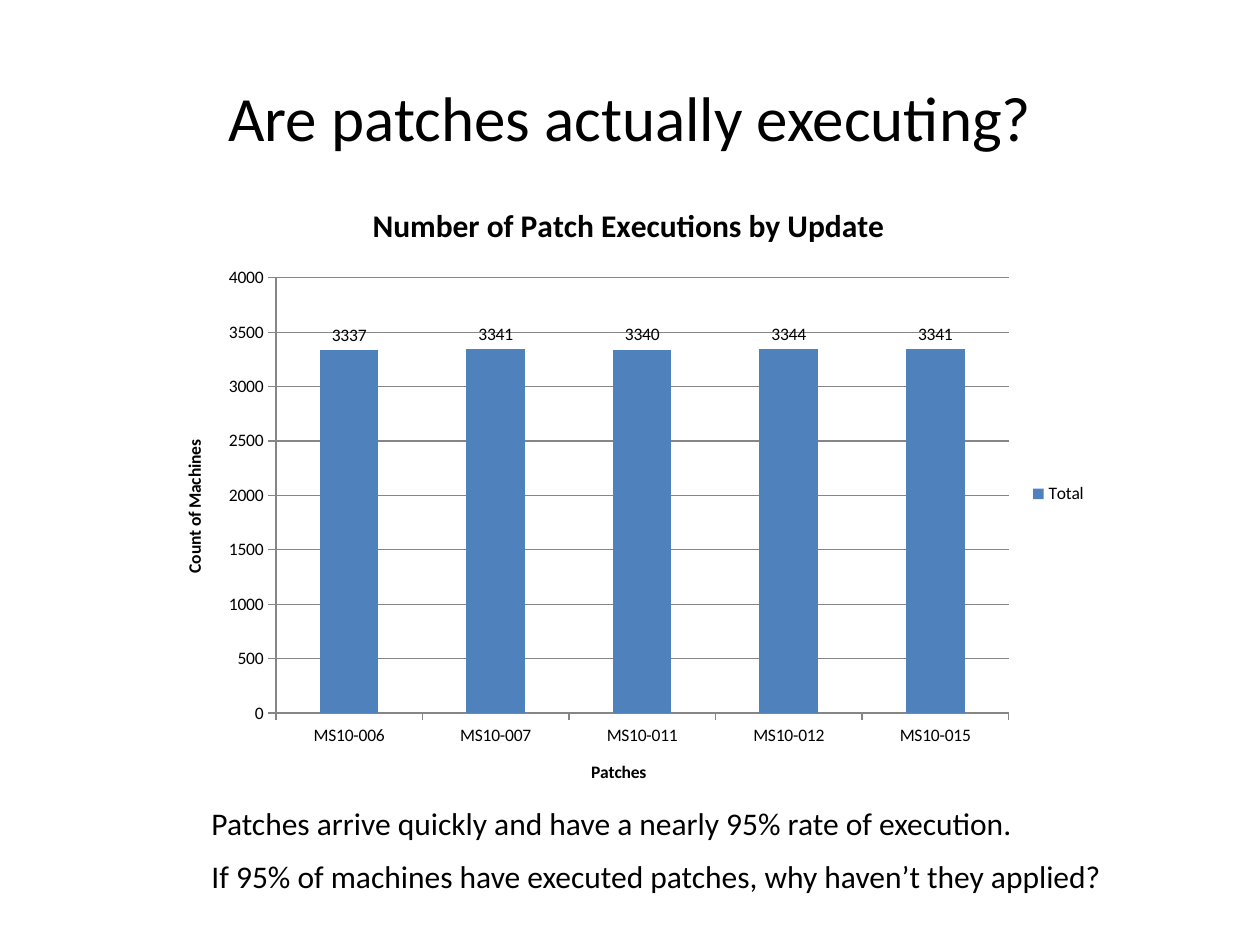
from pptx import Presentation
from pptx.chart.data import CategoryChartData
from pptx.dml.color import RGBColor
from pptx.enum.chart import (XL_CHART_TYPE as ChartType, XL_LABEL_POSITION as LabelPosition,
                             XL_LEGEND_POSITION as LegendPosition, XL_TICK_MARK as TickMark)
from pptx.enum.text import MSO_ANCHOR as Anchor, PP_ALIGN as Align
from pptx.util import Inches, Pt

COLORS = {"text": "000000", "bar": "4F81BD", "line": "868686"}
COLUMNS, ROWS = 100, 75


class SlideBuilder:
    """Holds the style and the current slide; places are in grid columns and rows."""

    font_name = "Calibri"

    def __init__(self, deck):
        self.page = deck.slides.add_slide(deck.slide_layouts[6])
        self.column = deck.slide_width / COLUMNS
        self.row = deck.slide_height / ROWS

    def place(self, left, top, width, height):
        return (round(left * self.column), round(top * self.row),
                round(width * self.column), round(height * self.row))

    def style_font(self, font, size, bold=False):
        font.name, font.size, font.bold = self.font_name, Pt(size), bold
        font.color.rgb = RGBColor.from_string(COLORS["text"])

    def style_line(self, line):
        line.color.rgb = RGBColor.from_string(COLORS["line"])
        line.width = Pt(0.75)

    def text(self, words, area, size, align=Align.LEFT, anchor=Anchor.TOP):
        frame = self.page.shapes.add_textbox(*self.place(*area)).text_frame
        frame.word_wrap = True
        frame.vertical_anchor = anchor
        para = frame.paragraphs[0]
        para.text = words
        para.alignment = align
        self.style_font(para.font, size)

    def chart_title(self, owner, words, size):
        para = owner.text_frame.paragraphs[0]
        para.text = words
        self.style_font(para.font, size, bold=True)

    def column_chart(self, title, axis_titles, name, values, area):
        data = CategoryChartData()
        data.categories = list(values)
        data.add_series(name, list(values.values()))
        chart = self.page.shapes.add_chart(
            ChartType.COLUMN_CLUSTERED, *self.place(*area), data).chart
        self.style_font(chart.font, 10)
        chart.has_title = True
        self.chart_title(chart.chart_title, title, 18)
        chart.has_legend = True
        chart.legend.position = LegendPosition.RIGHT
        chart.legend.include_in_layout = False

        # Axes
        for axis, words in zip((chart.category_axis, chart.value_axis), axis_titles):
            axis.has_title = True
            self.chart_title(axis.axis_title, words, 10)
            axis.major_tick_mark = TickMark.OUTSIDE
            self.style_line(axis.format.line)
        scale = chart.value_axis
        scale.minimum_scale, scale.maximum_scale, scale.major_unit = 0, 4000, 500
        scale.has_major_gridlines = True
        self.style_line(scale.major_gridlines.format.line)

        # Bars and their values
        plot = chart.plots[0]
        plot.gap_width = 150
        plot.vary_by_categories = False
        fill = plot.series[0].format.fill
        fill.solid()
        fill.fore_color.rgb = RGBColor.from_string(COLORS["bar"])
        plot.has_data_labels = True
        labels = plot.data_labels
        labels.show_value = True
        labels.position = LabelPosition.OUTSIDE_END
        self.style_font(labels.font, 10)


def main():
    deck = Presentation()
    deck.slide_width, deck.slide_height = Inches(10), Inches(7.5)
    slide = SlideBuilder(deck)

    # Heading
    slide.text("Are patches actually executing?", (5, 3, 90, 12.5), 36,
               Align.CENTER, Anchor.MIDDLE)

    # Executions per patch
    executions = {"MS10-006": 3337, "MS10-007": 3341, "MS10-011": 3340,
                  "MS10-012": 3344, "MS10-015": 3341}
    slide.column_chart("Number of Patch Executions by Update",
                       ("Patches", "Count of Machines"), "Total", executions,
                       (12.5, 14.2, 74.8, 50))

    # Remarks
    remarks = ("Patches arrive quickly and have a nearly 95% rate of execution.",
               "If 95% of machines have executed patches, why haven’t they applied?")
    for index, remark in enumerate(remarks):
        slide.text(remark, (15.8, 63.3 + 4.2 * index, 74.2, 4), 18)

    deck.save("out.pptx")


if __name__ == "__main__":
    main()
